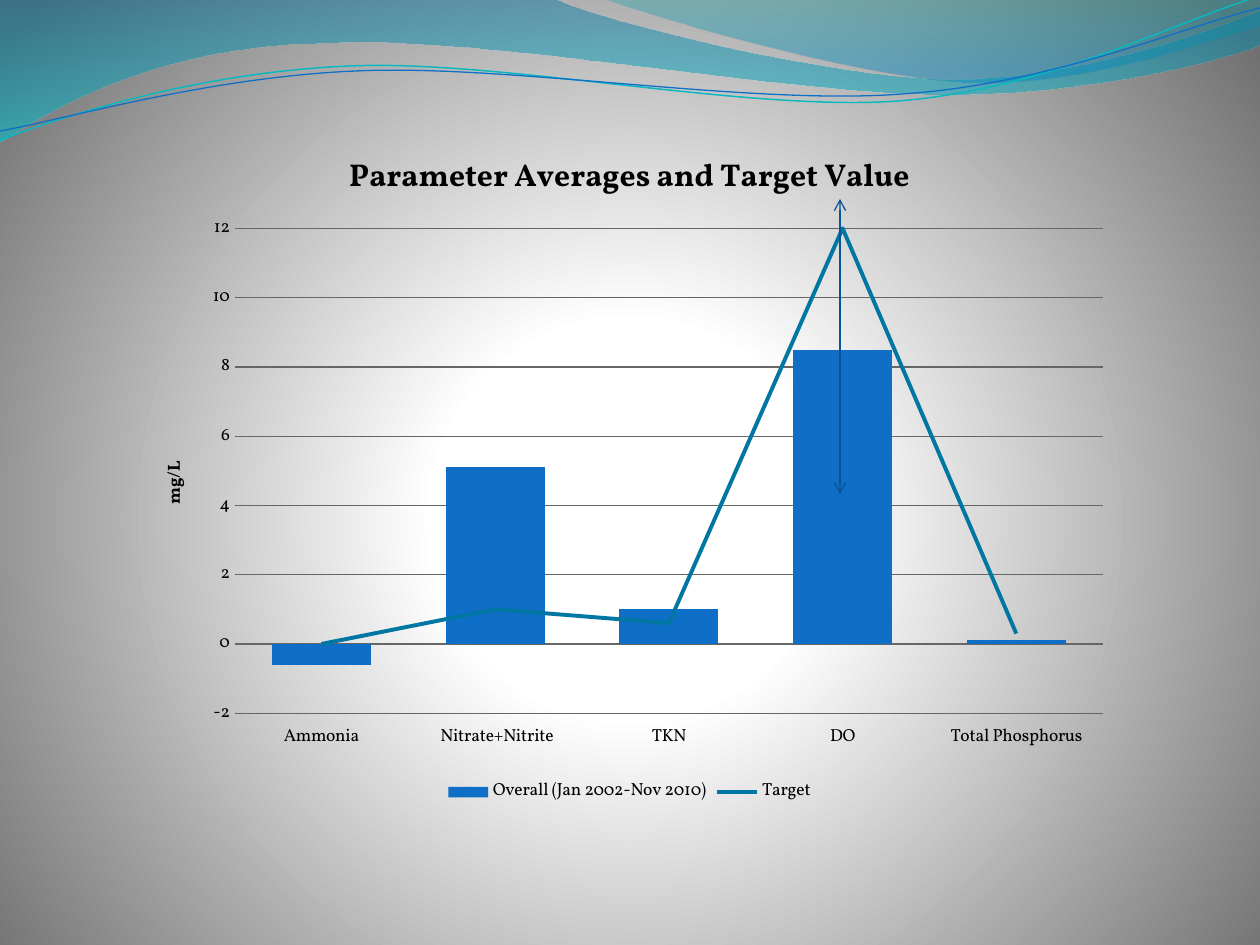
from pptx import Presentation
from pptx.chart.data import CategoryChartData
from pptx.dml.color import RGBColor
from pptx.enum.chart import (XL_CHART_TYPE, XL_LEGEND_POSITION, XL_MARKER_STYLE,
                             XL_TICK_LABEL_POSITION, XL_TICK_MARK)
from pptx.enum.shapes import MSO_CONNECTOR
from pptx.oxml import parse_xml
from pptx.oxml.ns import nsdecls, qn
from pptx.util import Pt

PX = 914400 / 126
HUES = {
    "white": "FFFFFF", "gray": "707070", "grid": "666666", "black": "000000",
    "deep": "0074A1", "aqua": "00C6CF", "teal": "00A1A9", "sky": "008BBF",
    "cyan": "0AB8BF", "blue": "0F6FC6", "navy": "095295", "target": "0076A3",
}
DOWN = '<a:lin ang="5400000" scaled="1"/>'
ROUND = ('<a:path path="circle"><a:fillToRect l="10000" t="110000" '
         'r="10000" b="100000"/></a:path>')


def emu(px):
    return round(px * PX)


def hue(name):
    return RGBColor.from_string(HUES[name])


def blend(props, stops, shade):
    """Swap the solid fill in props for a gradient of (place, hue, opacity) stops."""
    marks = "".join(
        f'<a:gs pos="{at * 1000}"><a:srgbClr val="{HUES[name]}">'
        f'<a:alpha val="{alpha * 1000}"/></a:srgbClr></a:gs>'
        for at, name, alpha in stops)
    grad = parse_xml(f'<a:gradFill {nsdecls("a")} rotWithShape="1">'
                     f'<a:gsLst>{marks}</a:gsLst>{shade}</a:gradFill>')
    props.replace(props.find(qn("a:solidFill")), grad)


class Deck:
    font = "Vollkorn"
    size = 10

    def __init__(self, wide, high):
        self.show = Presentation()
        self.show.slide_width, self.show.slide_height = emu(wide), emu(high)
        self.slide = self.show.slides.add_slide(self.show.slide_layouts[6])

    def back(self, stops):
        self.slide.background.fill.solid()
        blend(self.slide._element.find(".//" + qn("p:bgPr")), stops, ROUND)

    def wave(self, start, parts, stops=None, line=None, width=1):
        """Draw parts of one point (straight) or three points (Bezier curve)."""
        pen = self.slide.shapes.build_freeform(*start, scale=PX)
        pen.add_line_segments([p for part in parts for p in part], close=bool(stops))
        shape = pen.convert_to_shape()
        shape.shadow.inherit = False
        # Join each run of three line points into one curve
        steps = iter(list(shape._element.iter(qn("a:lnTo"))))
        for part in parts:
            group = [next(steps) for _ in part]
            if len(group) == 3:
                curve = parse_xml(f'<a:cubicBezTo {nsdecls("a")}/>')
                group[0].addprevious(curve)
                for step in group:
                    curve.append(step[0])
                    step.getparent().remove(step)
        if stops:
            shape.fill.solid()
            blend(shape._element.spPr, stops, DOWN)
            shape.line.fill.background()
        else:
            shape.fill.background()
            shape.line.color.rgb = hue(line)
            shape.line.width = Pt(width)

    def arrow(self, start, end, name, width):
        line = self.slide.shapes.add_connector(
            MSO_CONNECTOR.STRAIGHT, *map(emu, start + end))
        line.line.color.rgb = hue(name)
        line.line.width = Pt(width)
        stroke = line.line._get_or_add_ln()
        for tip in ("headEnd", "tailEnd"):
            stroke.append(parse_xml(f'<a:{tip} {nsdecls("a")} type="arrow"/>'))
        line._element.spPr.append(parse_xml(f'<a:effectLst {nsdecls("a")}/>'))

    def label(self, owner, text, size):
        frame = owner.text_frame
        frame.text = text
        font = frame.paragraphs[0].font
        font.name, font.size, font.bold = self.font, Pt(size), True
        font.color.rgb = hue("black")

    def combo(self, box, title, unit, cats, bars, goal):
        """Draw a column chart whose second series is a line."""
        data = CategoryChartData()
        data.categories = cats
        for name, vals in (bars, goal):
            data.add_series(name, vals)
        chart = self.slide.shapes.add_chart(
            XL_CHART_TYPE.COLUMN_CLUSTERED, *map(emu, box), data).chart
        chart.font.name, chart.font.size = self.font, Pt(self.size)
        chart.font.color.rgb = hue("black")
        chart.has_title = True
        self.label(chart.chart_title, title, 18)
        chart.has_legend = True
        chart.legend.position = XL_LEGEND_POSITION.BOTTOM
        chart.legend.include_in_layout = False

        # Axes
        cat, val = chart.category_axis, chart.value_axis
        cat.tick_label_position = XL_TICK_LABEL_POSITION.LOW
        for axis in (cat, val):
            axis.major_tick_mark = axis.minor_tick_mark = XL_TICK_MARK.NONE
        val.minimum_scale, val.maximum_scale, val.major_unit = -2, 12, 2
        val.tick_labels.number_format = "0"
        val.tick_labels.number_format_is_linked = False
        val.format.line.fill.background()
        for rule in (cat.format.line, val.major_gridlines.format.line):
            rule.color.rgb = hue("grid")
            rule.width = Pt(0.75)
        val.has_title = True
        self.label(val.axis_title, unit, self.size)

        # Columns
        plot = chart.plots[0]
        plot.gap_width, plot.overlap = 75, -25
        plot.vary_by_categories = False
        column = plot.series[0]
        column.invert_if_negative = False
        column.format.fill.solid()
        column.format.fill.fore_color.rgb = hue("blue")

        # Line on the same axes
        base = plot._element
        mixed = parse_xml(f'<c:lineChart {nsdecls("c")}><c:grouping val="standard"/>'
                          '<c:varyColors val="0"/><c:marker val="1"/></c:lineChart>')
        ser = base.findall(qn("c:ser"))[1]
        for flag in ser.findall(qn("c:invertIfNegative")):
            ser.remove(flag)
        mixed.insert(2, ser)
        for axis in base.findall(qn("c:axId")):
            mixed.append(parse_xml(
                f'<c:axId {nsdecls("c")} val="{axis.get("val")}"/>'))
        base.addnext(mixed)
        line = chart.plots[1].series[0]
        line.smooth = False
        line.marker.style = XL_MARKER_STYLE.NONE
        line.format.line.color.rgb = hue("target")
        line.format.line.width = Pt(2.25)

        # Inner plot area
        area = base.getparent()
        for old in area.findall(qn("c:layout")):
            area.remove(old)
        spots = "".join(f'<c:{key} val="{num}"/>' for key, num in
                        (("x", 0.1), ("y", 0.15), ("w", 0.88), ("h", 0.71)))
        area.insert(0, parse_xml(
            f'<c:layout {nsdecls("c")}><c:manualLayout><c:layoutTarget val="inner"/>'
            f'<c:xMode val="edge"/><c:yMode val="edge"/>{spots}'
            '</c:manualLayout></c:layout>'))


def main():
    deck = Deck(1260, 945)
    deck.back([(0, "white", 100), (25, "white", 100), (100, "gray", 100)])

    # Waves along the top
    deck.wave((0, 0), [
        [(554, -1)],
        [(600, 21), (837, 79), (955, 79)],
        [(1075, 79), (1207, 33), (1260, 11)],
        [(1261, 45)],
        [(1239, 55), (1096, 96), (940, 94)],
        [(784, 94), (481, 35), (324, 43)],
        [(163, 45), (58, 105), (-1, 142)],
    ], stops=[(0, "deep", 45), (100, "aqua", 55)])
    deck.wave((604, -1), [
        [(641, 14), (859, 78), (969, 82)],
        [(1079, 87), (1211, 40), (1260, 26)],
        [(1260, 0)],
    ], stops=[(0, "teal", 30), (80, "sky", 45)])
    deck.wave((0, 140), [
        [(60, 117), (199, 72), (349, 66)],
        [(498, 59), (747, 112), (898, 101)],
        [(1050, 89), (1182, 19), (1257, -3)],
    ], line="cyan", width=0.85)
    deck.wave((0, 131), [
        [(59, 121), (207, 77), (357, 71)],
        [(508, 64), (752, 106), (903, 94)],
        [(1053, 84), (1185, 26), (1260, 8)],
    ], line="blue", width=0.75)

    # Averages against targets
    deck.combo((136, 126, 987, 683), "Parameter Averages and Target Value", "mg/L",
               [" Ammonia ", " Nitrate+Nitrite", "TKN", "DO", "Total Phosphorus"],
               ("Overall (Jan 2002-Nov 2010)", [-0.6, 5.1, 1, 8.5, 0.1]),
               ("Target", [0, 1, 0.6, 12, 0.3]))

    # Range of the DO target
    deck.arrow((840, 199), (840, 494), "navy", 0.75)
    deck.show.save("out.pptx")


if __name__ == "__main__":
    main()
